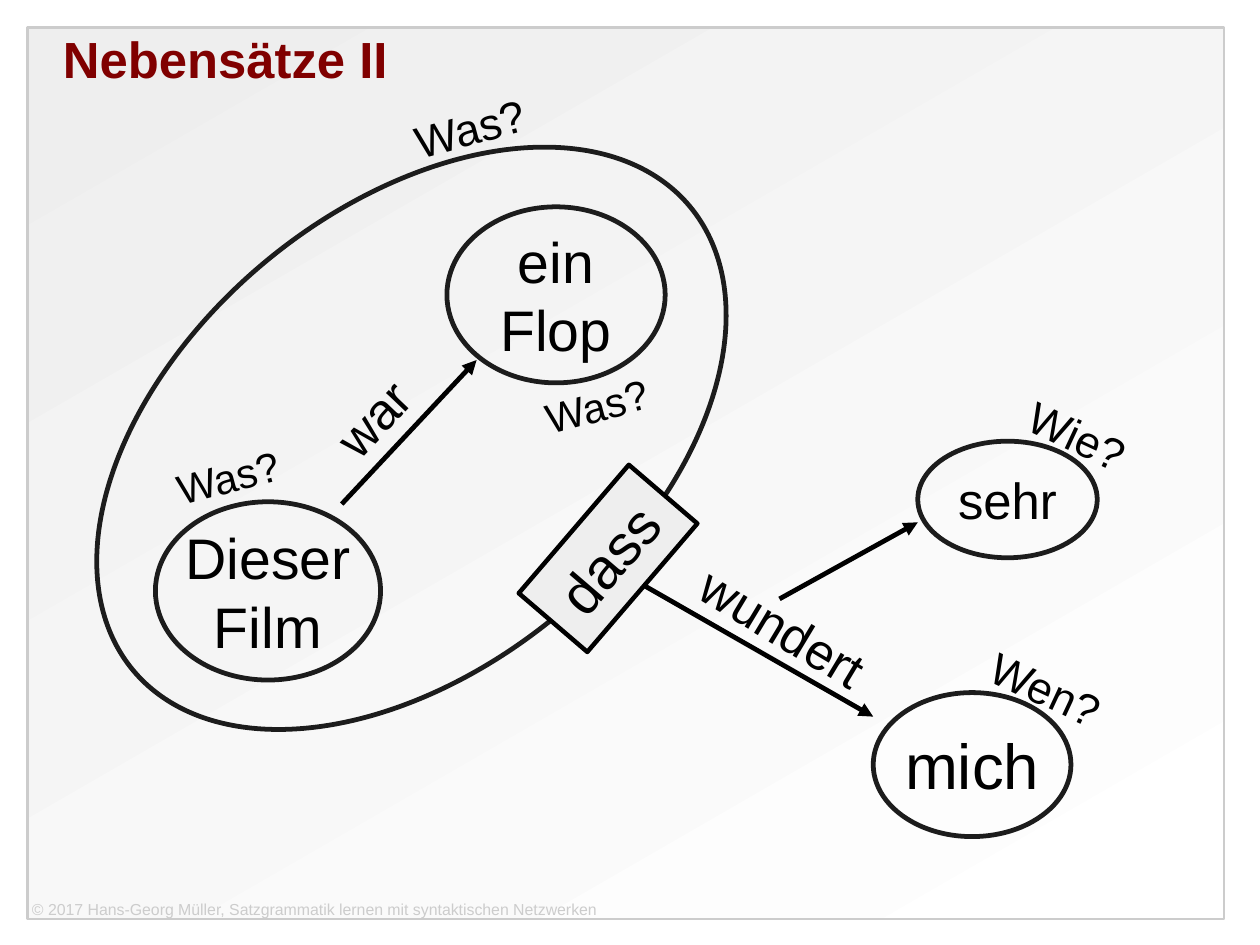
"""Build the slide on subordinate clauses as a syntactic network."""
from dataclasses import dataclass

from lxml import etree
from pptx import Presentation
from pptx.dml.color import RGBColor
from pptx.enum import shapes, text
from pptx.oxml import ns
from pptx.util import Cm, Inches, Pt


@dataclass(frozen=True)
class Theme:
    """Colours, type sizes and line widths."""
    font: str = "Arial"
    title: str = "800000"
    ink: str = "000000"
    outline: str = "1C1C1C"
    grey: str = "CCCCCC"
    panel: str = "EEEEEE"
    white: str = "FFFFFF"
    footer_pt: int = 10
    small_pt: int = 26
    label_pt: int = 28
    verb_pt: int = 32
    node_pt: int = 36
    big_pt: int = 40
    line_pt: float = 3
    box_pt: float = 2.83
    frame_pt: float = 1.5


T = Theme()


def rgb(value):
    """Return a colour from its hex value."""
    return RGBColor.from_string(value)


def inches(values):
    """Convert a sequence of numbers to lengths."""
    return [Inches(v) for v in values]


def write(tf, lines, size, color=T.ink, align=text.PP_ALIGN.LEFT, bold=False):
    """Fill a text frame with one paragraph per line."""
    for i, line in enumerate(lines):
        p = tf.add_paragraph() if i else tf.paragraphs[0]
        p.alignment = align
        r = p.add_run()
        r.text = line
        r.font.name, r.font.size, r.font.bold = T.font, Pt(size), bold
        r.font.color.rgb = rgb(color)


def set_margins(tf, left, top, right, bottom):
    """Set the four insets of a text frame."""
    tf.margin_left, tf.margin_top = Inches(left), Inches(top)
    tf.margin_right, tf.margin_bottom = Inches(right), Inches(bottom)


def add_node(s, box, lines=(), size=T.node_pt, rotation=0, kind="OVAL",
             fill=None, line=T.outline, width=T.line_pt):
    """Add an outlined shape with centred text."""
    sp = s.shapes.add_shape(shapes.MSO_SHAPE[kind], *inches(box))
    sp.shadow.inherit = False
    sp.rotation = rotation
    if fill:
        sp.fill.solid()
        sp.fill.fore_color.rgb = rgb(fill)
    else:
        sp.fill.background()
    sp.line.color.rgb = rgb(line)
    sp.line.width = Pt(width)
    tf = sp.text_frame
    tf.word_wrap = False
    tf.vertical_anchor = text.MSO_ANCHOR.MIDDLE
    set_margins(tf, 0.12, 0.07, 0.12, 0.07)
    write(tf, lines, size, align=text.PP_ALIGN.CENTER)
    return sp


def add_label(s, box, line, size, rotation):
    """Add a rotated text label."""
    sp = s.shapes.add_textbox(*inches(box))
    sp.rotation = rotation
    sp.text_frame.word_wrap = True
    write(sp.text_frame, [line], size)


def add_arrow(s, start, end):
    """Add a straight arrow between two points."""
    c = s.shapes.add_connector(shapes.MSO_CONNECTOR.STRAIGHT, *inches(start + end))
    c.line.color.rgb = rgb(T.ink)
    c.line.width = Pt(T.line_pt)
    etree.SubElement(c.line._get_or_add_ln(), ns.qn("a:tailEnd"), type="triangle")
    etree.SubElement(c._element.spPr, ns.qn("a:effectLst"))


def add_panel(s):
    """Add the shaded panel behind everything and its footer."""
    panel = add_node(s, (0.24, 0.24, 10.47, 7.8), kind="RECTANGLE",
                     line=T.grey, width=T.frame_pt)
    panel.fill.gradient()
    panel.fill.gradient_angle = 300
    for stop, color, position in zip(panel.fill.gradient_stops, (T.panel, T.white), (0, 1)):
        stop.color.rgb = rgb(color)
        stop.position = position
    s.shapes.title._element.addprevious(panel._element)
    tf = s.shapes.add_textbox(*inches((0.24, 7.87, 10.47, 0.16))).text_frame
    tf.word_wrap = True
    set_margins(tf, 0.04, 0, 0, 0)
    write(tf, ["© 2017 Hans-Georg Müller, Satzgrammatik lernen mit syntaktischen Netzwerken"],
          T.footer_pt, T.grey)


def add_title(s, line):
    """Place and format the title placeholder."""
    sp = s.shapes.title
    sp.left, sp.top, sp.width, sp.height = inches((0.55, 0.26, 9.92, 0.5))
    tf = sp.text_frame
    tf.vertical_anchor = text.MSO_ANCHOR.MIDDLE
    set_margins(tf, 0, 0, 0, 0)
    write(tf, [line], T.verb_pt, T.title, bold=True)


def main():
    """Build and save the slide."""
    prs = Presentation()
    prs.slide_width = Cm(28)
    prs.slide_height = Cm(21)
    s = prs.slides.add_slide(prs.slide_layouts[5])
    add_panel(s)
    add_title(s, "Nebensätze II")

    for box, lines, size in (
        ((7.64, 6.06, 1.73, 1.26), ["mich"], T.big_pt),
        ((3.91, 1.81, 1.91, 1.54), ["ein", "Flop"], T.node_pt),
        ((1.36, 4.39, 1.97, 1.56), ["Dieser", "Film"], T.node_pt),
        ((8.03, 3.86, 1.57, 1.02), ["sehr"], T.verb_pt),
    ):
        add_node(s, box, lines, size)
    add_node(s, (0.43, 1.83, 6.34, 4.01), rotation=320.2)
    add_node(s, (4.58, 4.49, 1.48, 0.79), ["dass"], rotation=310.6,
             kind="RECTANGLE", fill=T.panel, line=T.ink, width=T.box_pt)

    for start, end in (
        ((2.99, 4.41), (4.17, 3.15)),
        ((5.63, 5.12), (7.64, 6.27)),
        ((6.82, 5.24), (8.03, 4.57)),
    ):
        add_arrow(s, start, end)

    for box, line, size, rotation in (
        ((3.52, 0.82, 1.27, 0.56), "Was?", T.label_pt, 345),
        ((4.67, 3.25, 1.33, 0.6), "Was?", T.small_pt, 345),
        ((1.44, 3.88, 1.29, 0.56), "Was?", T.small_pt, 345),
        ((8.55, 5.79, 1.43, 0.53), "Wen?", T.label_pt, 25),
        ((8.88, 3.6, 1.43, 0.53), "Wie?", T.label_pt, 25),
        ((2.8, 3.32, 0.96, 0.64), "war", T.verb_pt, 313.6),
        ((5.96, 5.19, 1.86, 0.64), "wundert", T.verb_pt, 31),
    ):
        add_label(s, box, line, size, rotation)

    prs.save("out.pptx")


if __name__ == "__main__":
    main()
